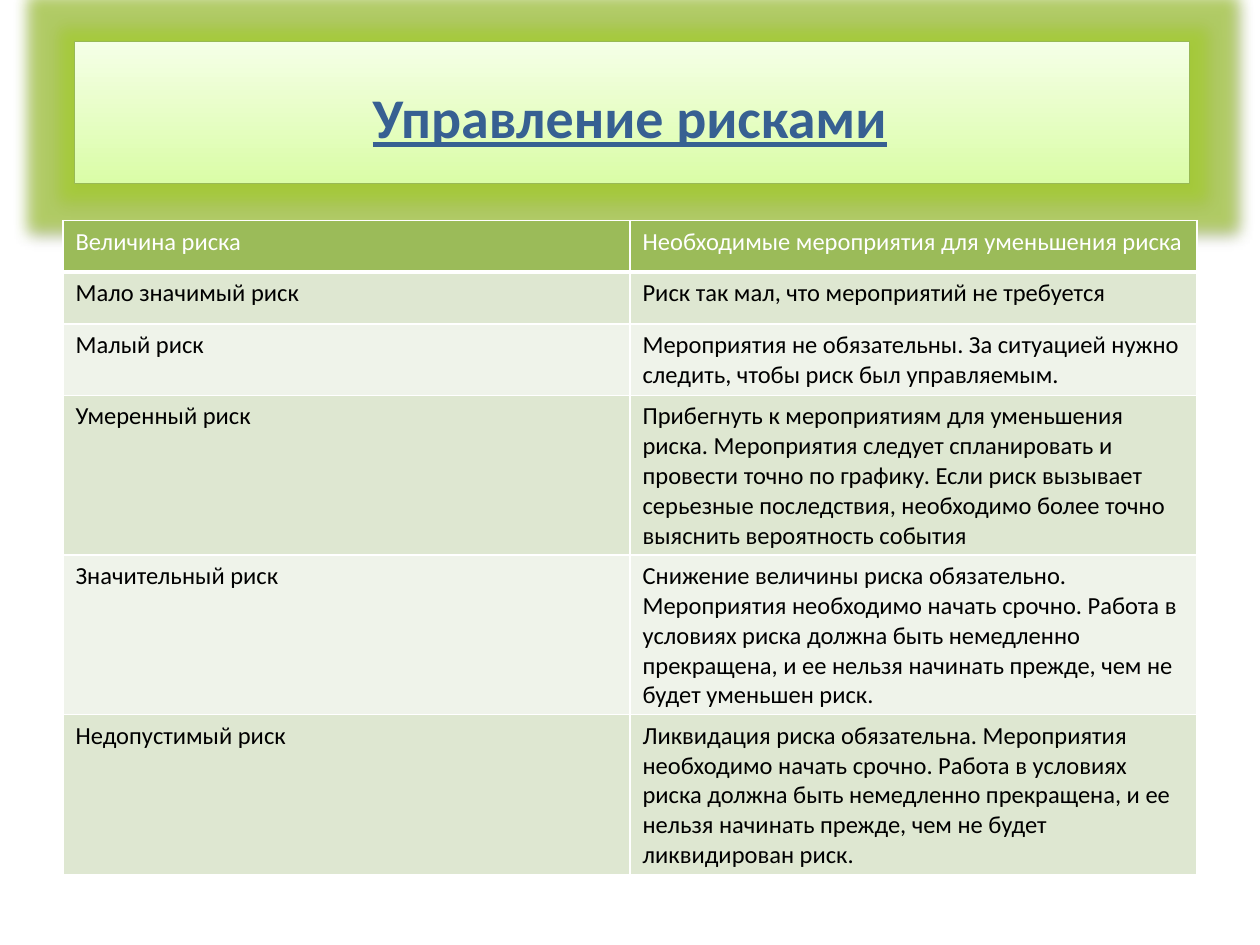
from pptx import Presentation
from pptx.dml.color import RGBColor
from pptx.enum.shapes import MSO_SHAPE
from pptx.enum.text import MSO_ANCHOR, PP_ALIGN
from pptx.oxml import parse_xml
from pptx.oxml.ns import nsdecls
from pptx.util import Inches, Pt

COLORS = {
    "lime": "DAFDA7", "pale": "F5FFE7", "edge": "98B955", "glow": "A5D028",
    "title": "376092", "head": "9BBB59", "odd": "DEE7D1", "even": "EFF3EA",
    "white": "FFFFFF", "black": "000000",
}

ROWS = [
    ("Величина риска", "Необходимые мероприятия для уменьшения риска"),
    ("Мало значимый риск", "Риск так мал, что мероприятий не требуется"),
    ("Малый риск",
     "Мероприятия не обязательны. За ситуацией нужно следить, "
     "чтобы риск был управляемым."),
    ("Умеренный риск",
     "Прибегнуть к мероприятиям для уменьшения риска. Мероприятия следует "
     "спланировать и провести точно по графику. Если риск вызывает серьезные "
     "последствия, необходимо более точно выяснить вероятность события"),
    ("Значительный риск",
     "Снижение величины риска обязательно. Мероприятия необходимо начать "
     "срочно. Работа в условиях риска должна быть немедленно прекращена, "
     "и ее нельзя начинать прежде, чем не будет уменьшен риск."),
    ("Недопустимый риск",
     "Ликвидация риска обязательна. Мероприятия необходимо начать срочно. "
     "Работа в условиях риска должна быть немедленно прекращена, и ее нельзя "
     "начинать прежде, чем не будет ликвидирован риск."),
]


def color(name):
    return RGBColor.from_string(COLORS[name])


class Deck:
    font = "Calibri"

    def __init__(self, slide):
        self.slide = slide

    def add_text(self, para, text, size, tint, bold=False, line=False):
        run = para.add_run()
        run.text = text
        font = run.font
        font.name, font.size = self.font, Pt(size)
        font.bold, font.underline = bold, line
        font.color.rgb = color(tint)

    def panel(self, x, y, w, h):
        box = self.slide.shapes.add_shape(
            MSO_SHAPE.RECTANGLE, Inches(x), Inches(y), Inches(w), Inches(h))
        box.fill.gradient()
        box.fill.gradient_angle = 90
        for stop, tint in zip(box.fill.gradient_stops, ("lime", "pale")):
            stop.color.rgb = color(tint)
        box.fill.gradient_stops[0].position = 0
        box.fill.gradient_stops[1].position = 1
        box.line.color.rgb = color("edge")
        box.line.width = Pt(0.75)
        # Glow and soft shadow
        box._element.spPr.append(parse_xml(
            f'<a:effectLst {nsdecls("a")}>'
            f'<a:glow rad="{Pt(18)}"><a:srgbClr val="{COLORS["glow"]}">'
            '<a:alpha val="60000"/></a:srgbClr></a:glow>'
            f'<a:outerShdw blurRad="{Pt(3.1)}" dist="{Pt(1.6)}" dir="5400000" '
            f'rotWithShape="0"><a:srgbClr val="{COLORS["black"]}">'
            '<a:alpha val="38000"/></a:srgbClr></a:outerShdw></a:effectLst>'))

    def title(self, text, x, y, w, h):
        box = self.slide.shapes.add_textbox(
            Inches(x), Inches(y), Inches(w), Inches(h))
        frame = box.text_frame
        frame.word_wrap = True
        frame.vertical_anchor = MSO_ANCHOR.MIDDLE
        para = frame.paragraphs[0]
        para.alignment = PP_ALIGN.CENTER
        self.add_text(para, text, 32, "title", bold=True, line=True)

    def border(self, cell, side, width):
        cell._tc.get_or_add_tcPr().append(parse_xml(
            f'<a:ln{side} {nsdecls("a")} w="{Pt(width)}"><a:solidFill>'
            f'<a:srgbClr val="{COLORS["white"]}"/></a:solidFill></a:ln{side}>'))

    def cell(self, cell, text, row):
        thick = {0: "B", 1: "T"}.get(row)
        for side in "LRTB":
            self.border(cell, side, 3 if side == thick else 1)
        cell.fill.solid()
        cell.fill.fore_color.rgb = color(
            "head" if row == 0 else "odd" if row % 2 else "even")
        self.add_text(cell.text_frame.paragraphs[0], text, 14,
                      "black" if row else "white")

    def table(self, data, x, y, w, high):
        grid = self.slide.shapes.add_table(
            len(data), len(data[0]), Inches(x), Inches(y),
            Inches(w), Inches(high * len(data))).table
        for i, texts in enumerate(data):
            grid.rows[i].height = Inches(high)
            for j, text in enumerate(texts):
                self.cell(grid.cell(i, j), text, i)


def main():
    prs = Presentation()
    prs.slide_width, prs.slide_height = Inches(10), Inches(7.5)
    deck = Deck(prs.slides.add_slide(prs.slide_layouts[6]))
    # Heading
    deck.panel(0.59, 0.33, 8.85, 1.13)
    deck.title("Управление рисками", 0.5, 0.3, 9, 1.25)
    # Risk levels and measures
    deck.table(ROWS, 0.5, 1.75, 9, 0.41)
    prs.save("out.pptx")


if __name__ == "__main__":
    main()
